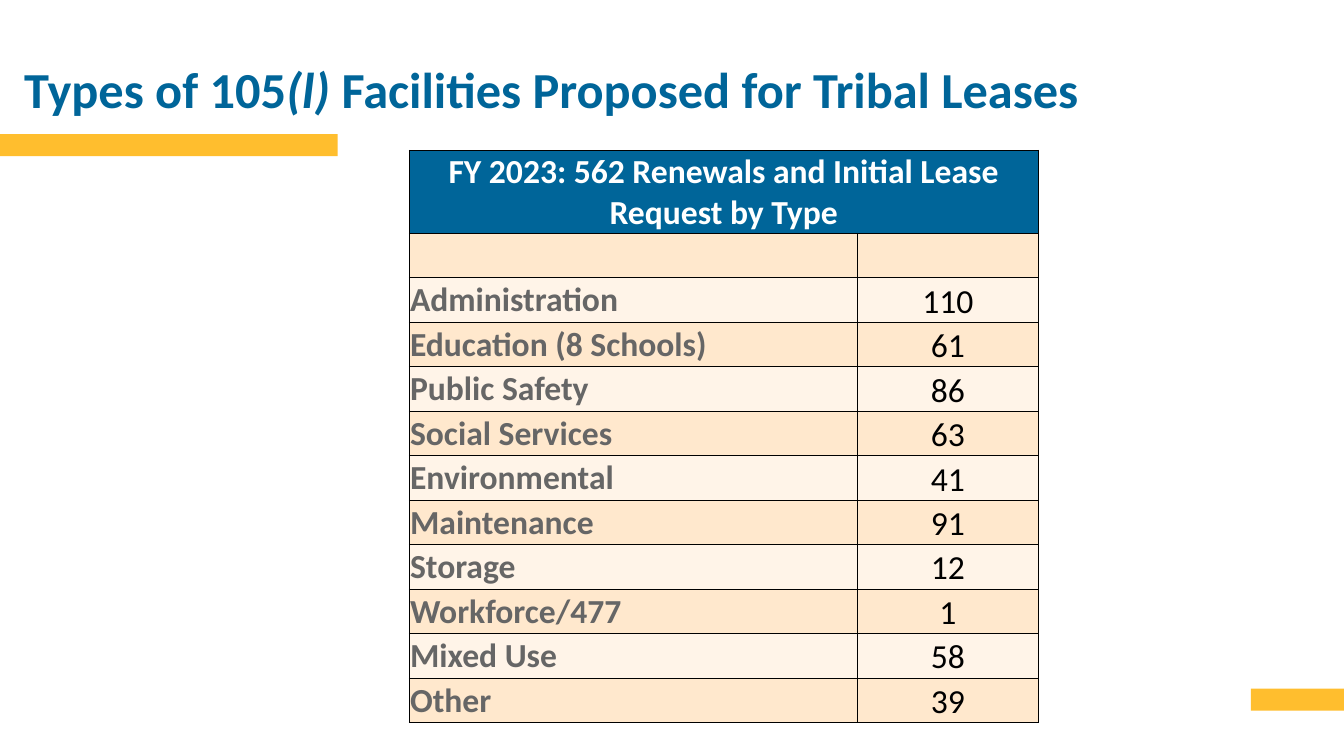
from lxml.etree import SubElement
from pptx import Presentation
from pptx.dml.color import RGBColor
from pptx.enum.shapes import MSO_SHAPE
from pptx.enum.text import MSO_ANCHOR, MSO_AUTO_SIZE, PP_ALIGN
from pptx.oxml import parse_xml
from pptx.oxml.ns import nsdecls, qn
from pptx.util import Pt

BLUE = RGBColor(0x00, 0x65, 0x99)
GOLD = RGBColor(0xFF, 0xBE, 0x2E)
GRAY = RGBColor(0x66, 0x66, 0x66)
BLACK = RGBColor(0x00, 0x00, 0x00)
WHITE = RGBColor(0xFF, 0xFF, 0xFF)
BAND_DARK = RGBColor(0xFF, 0xE8, 0xCD)
BAND_LIGHT = RGBColor(0xFF, 0xF4, 0xE8)

TITLE_PARTS = [
    ("Types of 105", False),
    ("(l)", True),
    (" Facilities Proposed for Tribal Leases", False),
]
TABLE_HEADING = "FY 2023: 562 Renewals and Initial Lease Request by Type"
LEASE_COUNTS = [
    ("Administration", 110),
    ("Education (8 Schools)", 61),
    ("Public Safety", 86),
    ("Social Services", 63),
    ("Environmental", 41),
    ("Maintenance", 91),
    ("Storage", 12),
    ("Workforce/477", 1),
    ("Mixed Use", 58),
    ("Other", 39),
]


class SlideBuilder:
    font_name = "Calibri"
    title_size = Pt(36)
    table_size = Pt(24)
    cell_margin = Pt(0.6)
    border_width = Pt(0.5)

    def __init__(self, slide):
        self.slide = slide

    def style_run(self, run, size, color, bold=True, italic=False):
        run.font.name = self.font_name
        run.font.size = size
        run.font.color.rgb = color
        run.font.bold = bold
        run.font.italic = italic

    def title(self, parts, left, top, width, height):
        shape = self.slide.shapes.title
        shape.left, shape.top = Pt(left), Pt(top)
        shape.width, shape.height = Pt(width), Pt(height)
        text_frame = shape.text_frame
        text_frame.auto_size = MSO_AUTO_SIZE.NONE
        text_frame.vertical_anchor = MSO_ANCHOR.BOTTOM
        text_frame.margin_left = text_frame.margin_right = 0
        text_frame.margin_top = text_frame.margin_bottom = 0
        paragraph = text_frame.paragraphs[0]
        paragraph.alignment = PP_ALIGN.LEFT
        paragraph.line_spacing = 0.9
        for text, italic in parts:
            run = paragraph.add_run()
            run.text = text
            self.style_run(run, self.title_size, BLUE, italic=italic)

    def bar(self, left, top, width, height):
        shape = self.slide.shapes.add_shape(
            MSO_SHAPE.RECTANGLE, Pt(left), Pt(top), Pt(width), Pt(height))
        shape.shadow.inherit = False
        shape.fill.solid()
        shape.fill.fore_color.rgb = GOLD
        shape.line.fill.background()

    def border(self, cell):
        properties = cell._tc.get_or_add_tcPr()
        for index, side in enumerate(("lnL", "lnR", "lnT", "lnB")):
            line = parse_xml(f'<a:{side} {nsdecls("a")} w="{self.border_width}"/>')
            fill = SubElement(line, qn("a:solidFill"))
            SubElement(fill, qn("a:srgbClr"), val=str(BLACK))
            properties.insert(index, line)

    def cell_text(self, cell, text, color, bold, alignment, anchor):
        cell.margin_left = cell.margin_right = cell.margin_top = self.cell_margin
        cell.margin_bottom = 0
        cell.vertical_anchor = anchor
        paragraph = cell.text_frame.paragraphs[0]
        paragraph.text = text
        paragraph.alignment = alignment
        self.style_run(paragraph.runs[0], self.table_size, color, bold)

    def table(self, heading, records, left, top, column_widths, heading_height, row_height):
        row_count = len(records) + 2
        height = heading_height + row_height * (row_count - 1)
        table = self.slide.shapes.add_table(
            row_count, len(column_widths), Pt(left), Pt(top),
            Pt(sum(column_widths)), Pt(height)).table
        table.horz_banding = False
        for column, width in zip(table.columns, column_widths):
            column.width = Pt(width)
        for index, row in enumerate(table.rows):
            row.height = Pt(row_height if index else heading_height)
            band = BAND_DARK if index % 2 else BAND_LIGHT
            for cell in row.cells:
                cell.fill.solid()
                cell.fill.fore_color.rgb = band if index else BLUE
                self.border(cell)
        heading_cell = table.cell(0, 0)
        heading_cell.merge(table.cell(0, len(column_widths) - 1))
        self.cell_text(heading_cell, heading, WHITE, True,
                       PP_ALIGN.CENTER, MSO_ANCHOR.MIDDLE)
        for index, (facility, count) in enumerate(records, start=2):
            self.cell_text(table.cell(index, 0), facility, GRAY, True,
                           PP_ALIGN.LEFT, MSO_ANCHOR.MIDDLE)
            self.cell_text(table.cell(index, 1), str(count), BLACK, False,
                           PP_ALIGN.CENTER, MSO_ANCHOR.BOTTOM)


def main():
    presentation = Presentation()
    presentation.slide_width = Pt(960)
    presentation.slide_height = Pt(540)
    slide = presentation.slides.add_slide(presentation.slide_layouts[5])
    builder = SlideBuilder(slide)
    builder.bar(893.5, 491.8, 66.5, 15.8)
    builder.bar(0, 95.8, 241.2, 15.8)
    builder.title(TITLE_PARTS, 17.3, 16.6, 873.4, 68.4)
    builder.table(TABLE_HEADING, LEASE_COUNTS, 292.3, 107.3, (320.4, 128.9), 59.3, 31.8)
    presentation.save("out.pptx")


if __name__ == "__main__":
    main()
